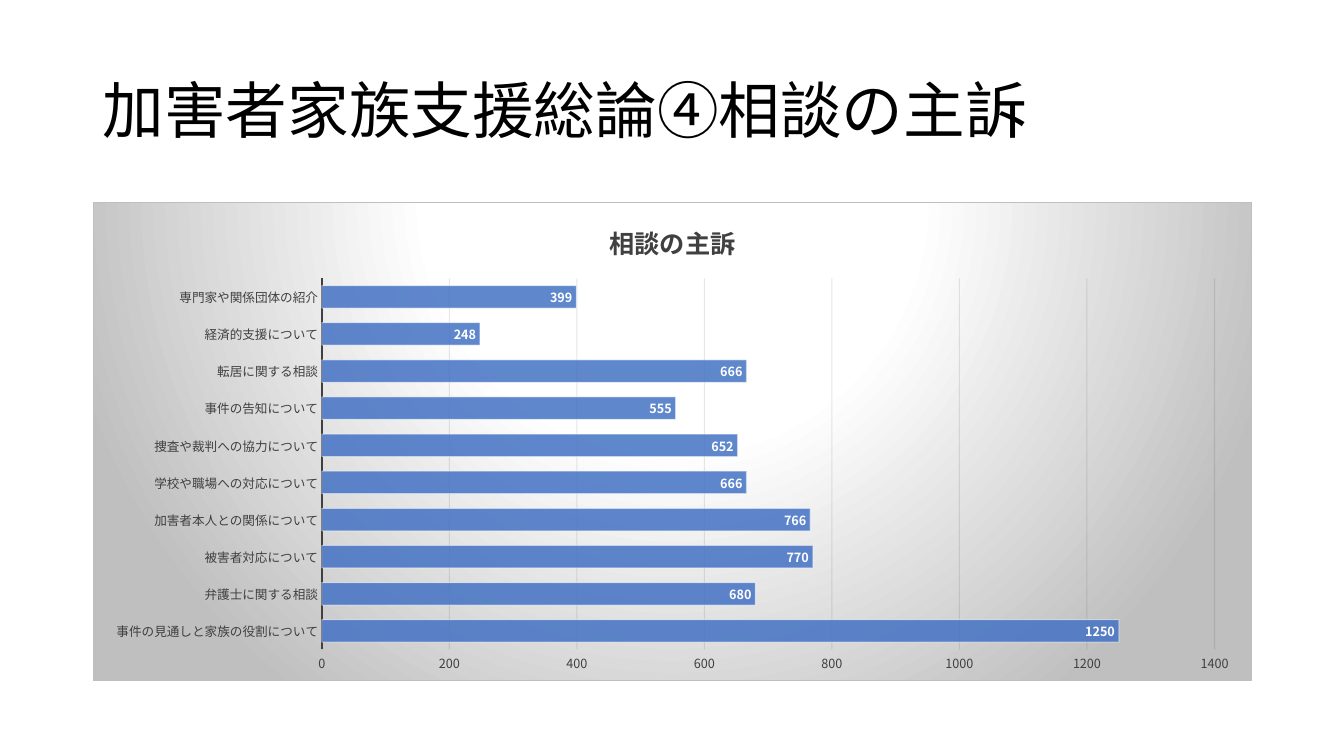
from lxml.etree import SubElement
from pptx import Presentation
from pptx.chart.data import CategoryChartData
from pptx.dml.color import RGBColor
from pptx.enum.chart import XL_CHART_TYPE, XL_LABEL_POSITION, XL_TICK_MARK
from pptx.enum.text import MSO_ANCHOR
from pptx.oxml import parse_xml
from pptx.oxml.ns import nsdecls, qn
from pptx.util import Inches, Pt

FONT = "Noto Sans CJK JP"
GRAY = "404040"
COMPLAINTS = [
    ("事件の見通しと家族の役割について", 1250),
    ("弁護士に関する相談", 680),
    ("被害者対応について", 770),
    ("加害者本人との関係について", 766),
    ("学校や職場への対応について", 666),
    ("捜査や裁判への協力について", 652),
    ("事件の告知について", 555),
    ("転居に関する相談", 666),
    ("経済的支援について", 248),
    ("専門家や関係団体の紹介", 399),
]


def color(value):
    return RGBColor.from_string(value)


def style_font(font, size, value, bold=False):
    font.name = FONT
    font.size = Pt(size)
    font.bold = bold
    font.color.rgb = color(value)


def style_line(line, value, width):
    line.color.rgb = color(value)
    line.width = Pt(width)


def set_east_asian_font(element):
    for latin in list(element.iter(qn("a:latin"))):
        latin.addnext(parse_xml(f'<a:ea {nsdecls("a")} typeface="{FONT}"/>'))


def set_opacity(element, *percentages):
    for tone, percentage in zip(element.iter(qn("a:srgbClr")), percentages):
        SubElement(tone, qn("a:alpha")).set("val", str(percentage * 1000))


def add_title(slide, text):
    box = slide.shapes.add_textbox(Inches(0.92), Inches(0.4), Inches(11.5), Inches(1.45))
    frame = box.text_frame
    frame.word_wrap = True
    frame.vertical_anchor = MSO_ANCHOR.MIDDLE
    paragraph = frame.paragraphs[0]
    paragraph.line_spacing = 0.9
    run = paragraph.add_run()
    run.text = text
    style_font(run.font, 44, "000000")
    set_east_asian_font(box.element)


def fill_chart_area(chart_space):
    stops = "".join(
        f'<a:gs pos="{position * 1000}"><a:srgbClr val="{value}"/></a:gs>'
        for position, value in [(0, "FFFFFF"), (39, "FFFFFF"), (100, "BFBFBF")]
    )
    area = parse_xml(
        f'<c:spPr {nsdecls("c", "a")}><a:gradFill><a:gsLst>{stops}</a:gsLst>'
        '<a:path path="circle"><a:fillToRect l="50000" t="-80000" r="50000" b="180000"/></a:path>'
        f'</a:gradFill><a:ln w="{Pt(0.75)}"><a:solidFill><a:srgbClr val="BFBFBF"/></a:solidFill>'
        '</a:ln></c:spPr>'
    )
    chart_space.find(qn("c:chart")).addnext(area)


def style_axes(chart):
    for axis in (chart.category_axis, chart.value_axis):
        axis.major_tick_mark = XL_TICK_MARK.NONE
        axis.minor_tick_mark = XL_TICK_MARK.NONE
        style_font(axis.tick_labels.font, 9, GRAY)
    style_line(chart.category_axis.format.line, GRAY, 1.5)
    value_axis = chart.value_axis
    value_axis.minimum_scale = 0
    value_axis.maximum_scale = 1400
    value_axis.major_unit = 200
    value_axis.format.line.fill.background()
    style_line(value_axis.major_gridlines.format.line, "0D0D0D", 0.75)
    set_opacity(chart._chartSpace.find(".//" + qn("c:majorGridlines")), 10)


def style_bars(plot):
    plot.gap_width = 65
    plot.vary_by_categories = False
    series = plot.series[0]
    series.format.fill.solid()
    series.format.fill.fore_color.rgb = color("4472C4")
    style_line(series.format.line, "FFFFFF", 0.75)
    set_opacity(series._element, 85, 50)
    labels = series.data_labels
    labels.show_value = True
    labels.position = XL_LABEL_POSITION.INSIDE_END
    style_font(labels.font, 9, "FFFFFF", True)


def add_complaint_chart(slide, title):
    data = CategoryChartData()
    data.categories = [name for name, count in COMPLAINTS]
    data.add_series("Series 1", [count for name, count in COMPLAINTS])
    chart = slide.shapes.add_chart(
        XL_CHART_TYPE.BAR_CLUSTERED, Inches(0.92), Inches(2), Inches(11.5), Inches(4.76), data
    ).chart
    style_font(chart.font, 10, "000000")
    chart.has_legend = False
    chart.has_title = True
    run = chart.chart_title.text_frame.paragraphs[0].add_run()
    run.text = title
    style_font(run.font, 18, GRAY, True)
    chart.chart_title.include_in_layout = False
    style_axes(chart)
    style_bars(chart.plots[0])
    fill_chart_area(chart._chartSpace)
    set_east_asian_font(chart._chartSpace)


def main():
    presentation = Presentation()
    presentation.slide_width = Inches(13.33)
    presentation.slide_height = Inches(7.5)
    slide = presentation.slides.add_slide(presentation.slide_layouts[6])
    add_title(slide, "加害者家族支援総論④相談の主訴")
    add_complaint_chart(slide, "相談の主訴")
    presentation.save("out.pptx")


if __name__ == "__main__":
    main()
